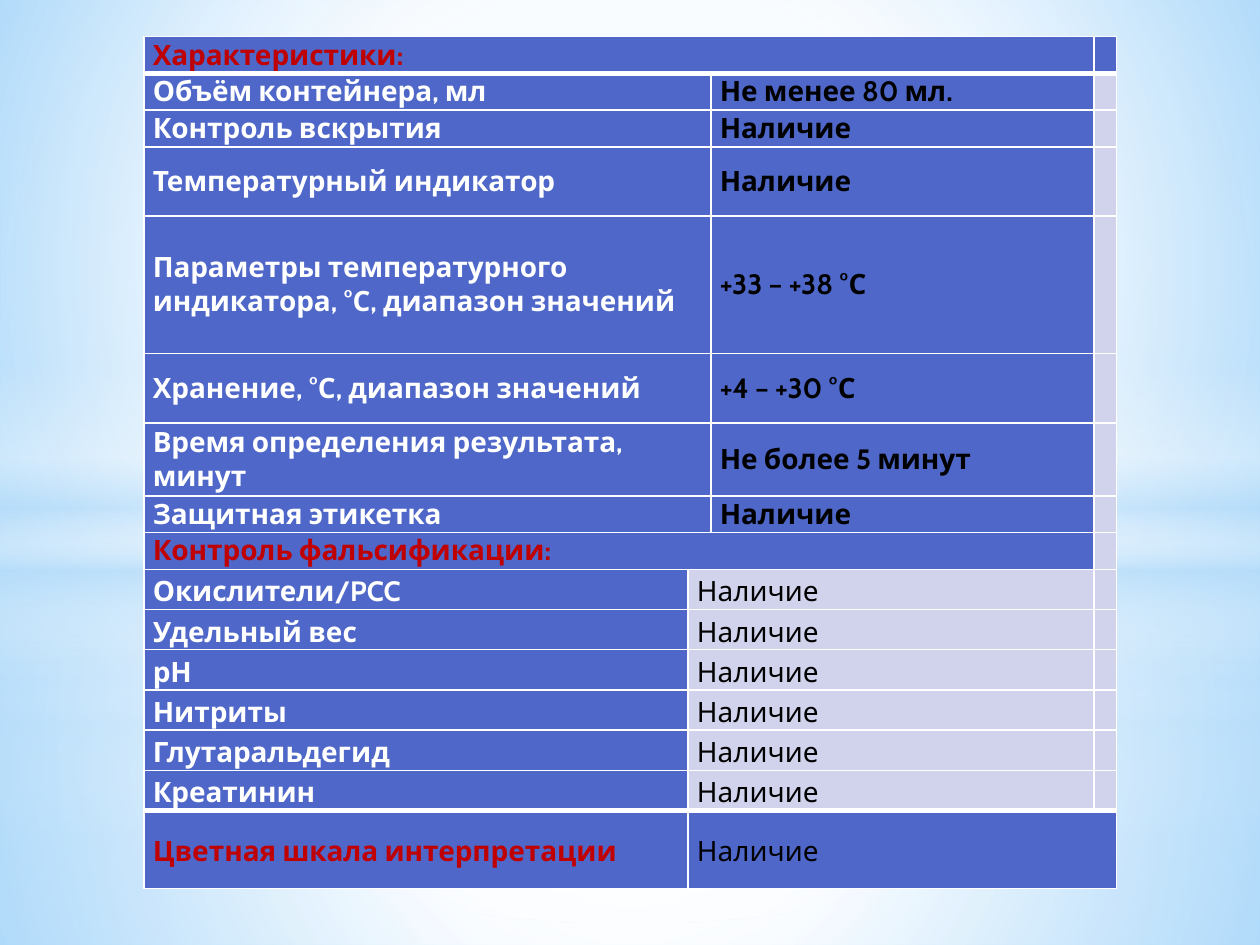
import pptx
import pptx.util
from pptx.dml.color import RGBColor
from pptx.enum.shapes import MSO_SHAPE
from pptx.enum.text import MSO_ANCHOR, PP_ALIGN
from pptx.oxml import parse_xml
from pptx.oxml.ns import nsdecls, qn
from pptx.util import Cm

COLORS = {"blue": "4E67C8", "pale": "D0D3EB", "white": "FFFFFF", "black": "000000",
          "red": "C00000", "sky": "B4DCFA", "azure": "9ED5FF", "deep": "5BB9FF"}
FONT = "Cabin"
CENTRE = (50, 50, 50, 50)
COLUMNS = (10.97, 0.25, 7.72, 0.25)
CHARACTERISTICS = [
    ("Объём контейнера, мл", "Не менее 80 мл.", 0.74),
    ("Контроль вскрытия", "Наличие", 0.74),
    ("Температурный индикатор", "Наличие", 1.4),
    ("Параметры температурного индикатора, °С, диапазон значений", "+33 – +38 °С", 2.77),
    ("Хранение, °С, диапазон значений", "+4 – +30 °С", 1.4),
    ("Время определения результата, минут", "Не более 5 минут", 1.47),
    ("Защитная этикетка", "Наличие", 0.74),
]
CONTROLS = ["Окислители/PCC", "Удельный вес", "рН", "Нитриты", "Глутаральдегид", "Креатинин"]


def set_gradient(holder, stops, centre=None):
    """Replace the solid fill of a holder by a circular or a vertical gradient."""
    marks = "".join(
        f'<a:gs pos="{place * 1000}"><a:srgbClr val="{COLORS[name]}">'
        f'<a:alpha val="{alpha * 1000}"/></a:srgbClr></a:gs>' for place, name, alpha in stops)
    if centre:
        sides = " ".join(f'{side}="{share * 1000}"' for side, share in zip("ltrb", centre))
        course = f'<a:path path="circle"><a:fillToRect {sides}/></a:path>'
    else:
        course = '<a:lin ang="5400000" scaled="0"/>'
    fill = parse_xml(f'<a:gradFill {nsdecls("a")} rotWithShape="1">'
                     f'<a:gsLst>{marks}</a:gsLst>{course}</a:gradFill>')
    holder.replace(holder.find(qn("a:solidFill")), fill)


def add_glow(page, top, height, stops, centre=CENTRE, kind=MSO_SHAPE.RECTANGLE):
    """Add a full-width decorative shape with a gradient."""
    shape = page.shapes.add_shape(kind, 0, Cm(top), Cm(25.4), Cm(height))
    shape.shadow.inherit = False
    shape.line.fill.background()
    shape.fill.solid()
    set_gradient(shape.element.spPr, stops, centre)


def add_backdrop(page):
    """Paint the background and its two sets of glows."""
    page.background.fill.solid()
    set_gradient(page.element.find(".//" + qn("p:bgPr")),
                 [(0, "azure", 100), (60, "white", 100), (100, "deep", 100)], (20, 10, 20, 60))
    streak = [(0, "white", 0), (29, "white", 30), (45, "sky", 40),
              (55, "white", 26), (65, "sky", 60), (100, "white", 0)]
    for horizon, streak_top, extra, halo in ((14.17, 10.46, 0, 56), (10.74, 7.37, 1, 54)):
        add_glow(page, horizon, 19.05 - horizon,
                 [(0, "white", 91 + extra), (37, "white", 76 + extra), (100, "sky", 79 + extra)])
        add_glow(page, 0, horizon,
                 [(0, "white", 89 + extra), (48, "white", 62 + extra), (100, "sky", 79 + extra)])
        add_glow(page, streak_top, 6.35, streak, None)
        add_glow(page, 4.45, 14.17, [(0, "white", 100), (halo, "white", 0)],
                 kind=MSO_SHAPE.OVAL)


def style_cell(cell, fill, top=1, bottom=1):
    """Give a cell its borders, fill, insets and empty-text size."""
    properties = cell._tc.get_or_add_tcPr()
    for side, width in (("L", 1), ("R", 1), ("T", top), ("B", bottom)):
        properties.append(parse_xml(
            f'<a:ln{side} {nsdecls("a")} w="{width * 12700}"><a:solidFill>'
            f'<a:srgbClr val="{COLORS["white"]}"/></a:solidFill></a:ln{side}>'))
    cell.fill.solid()
    cell.fill.fore_color.rgb = RGBColor.from_string(COLORS[fill])
    cell.margin_left = cell.margin_right = Cm(0.18)
    cell.margin_top = cell.margin_bottom = 0
    cell.vertical_anchor = MSO_ANCHOR.MIDDLE
    cell.text_frame.paragraphs[0]._p.append(
        parse_xml(f'<a:endParaRPr {nsdecls("a")} sz="1600"/>'))


def write_cell(cell, text, color, bold=True, spacing=None, align=None):
    """Write one formatted paragraph into a cell."""
    para = cell.text_frame.paragraphs[0]
    para.text = text
    para.line_spacing = spacing
    para.alignment = align
    font = para.runs[0].font
    font.name, font.size, font.bold = FONT, pptx.util.Pt(16), bold
    font.color.rgb = RGBColor.from_string(COLORS[color])


def add_specification(page):
    """Add the table of container characteristics and adulteration controls."""
    heights = ([0.74] + [height for *_, height in CHARACTERISTICS]
               + [0.74] + [0.81] * len(CONTROLS) + [1.57])
    last = len(heights) - 1
    frame = page.shapes.add_table(len(heights), len(COLUMNS), Cm(2.9), Cm(0.74),
                                  Cm(sum(COLUMNS)), Cm(sum(heights)))
    table = frame.table
    table.first_row = table.horz_banding = False
    for column, width in zip(table.columns, COLUMNS):
        column.width = Cm(width)
    for row, height in zip(table.rows, heights):
        row.height = Cm(height)

    control_title = len(CHARACTERISTICS) + 1
    for number in range(len(heights)):
        for place in range(len(COLUMNS)):
            inner = 0 < number < last
            pale = inner and (place == 3 or (number > control_title and place > 0))
            style_cell(table.cell(number, place), "pale" if pale else "blue",
                       top=3 if number in (1, last) else 1,
                       bottom=3 if number in (0, last - 1) else 1)

    for number, title in ((0, "Характеристики:"), (control_title, "Контроль фальсификации:")):
        table.cell(number, 0).merge(table.cell(number, 2))
        write_cell(table.cell(number, 0), title, "red")
    for number, (name, value, _) in enumerate(CHARACTERISTICS, 1):
        table.cell(number, 0).merge(table.cell(number, 1))
        write_cell(table.cell(number, 0), name, "white")
        write_cell(table.cell(number, 2), value, "black")
    for number, name in enumerate(CONTROLS + ["Цветная шкала интерпретации"], control_title + 1):
        table.cell(number, 1).merge(table.cell(number, 3 if number == last else 2))
        write_cell(table.cell(number, 0), name, "red" if number == last else "white",
                   spacing=1.15)
        write_cell(table.cell(number, 1), "Наличие", "black", False, 1.15, PP_ALIGN.JUSTIFY)


def main():
    """Build and save the slide."""
    deck = pptx.Presentation()
    deck.slide_width, deck.slide_height = Cm(25.4), Cm(19.05)
    page = deck.slides.add_slide(deck.slide_layouts[6])
    add_backdrop(page)
    add_specification(page)
    deck.save("out.pptx")


if __name__ == "__main__":
    main()
